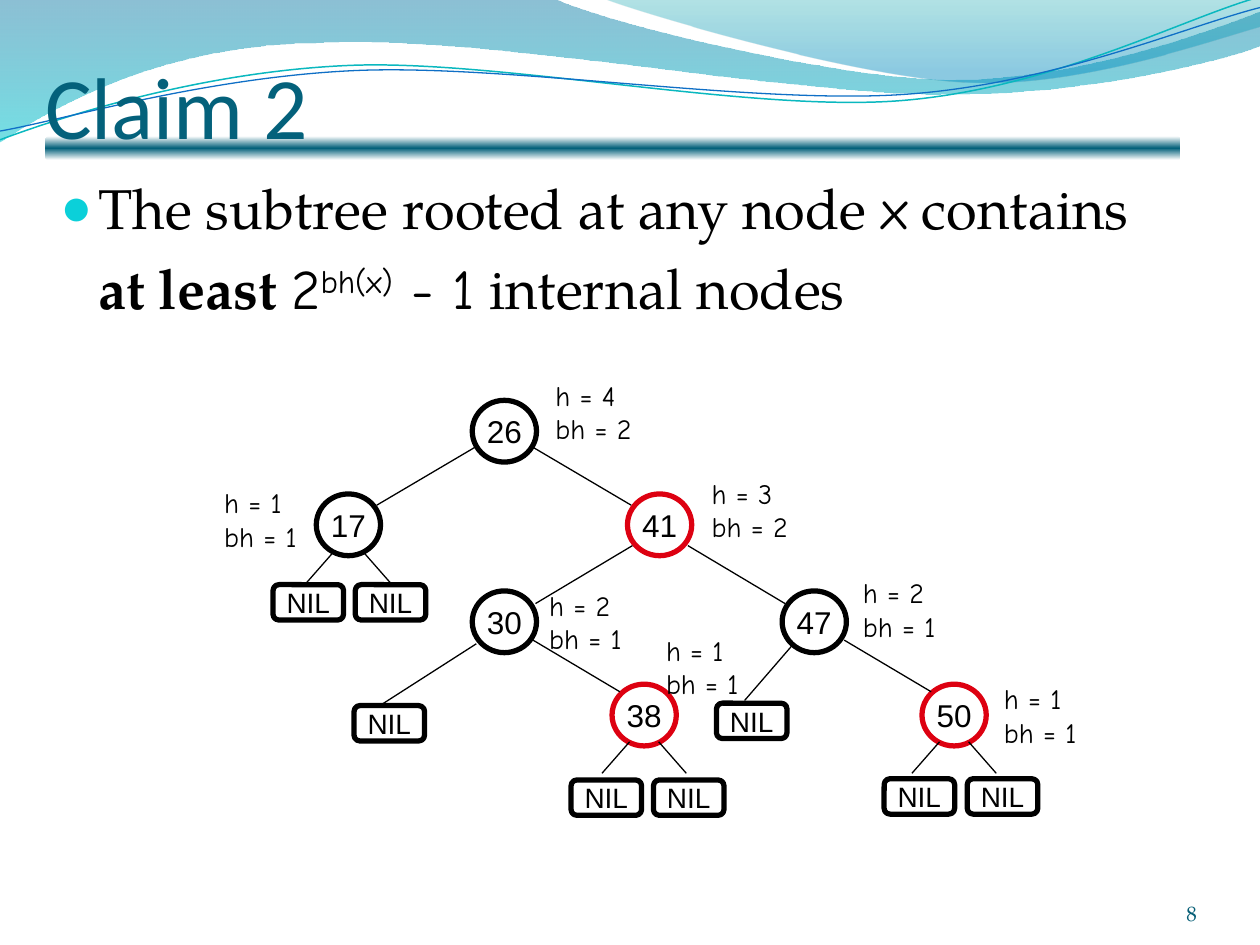
"""Build the slide on Claim 2 about black-heights in a red-black tree."""
from dataclasses import dataclass
from math import cos, radians, sin
from typing import NamedTuple

from lxml import etree
from pptx import Presentation
from pptx.dml.color import RGBColor
from pptx.enum.shapes import MSO_CONNECTOR, MSO_SHAPE
from pptx.enum.text import MSO_ANCHOR, MSO_AUTO_SIZE, PP_ALIGN
from pptx.oxml import parse_xml
from pptx.oxml.ns import nsdecls, qn
from pptx.util import Pt

OVAL, ROUNDED = MSO_SHAPE.OVAL, MSO_SHAPE.ROUNDED_RECTANGLE
STRAIGHT = MSO_CONNECTOR.STRAIGHT
TOP, MIDDLE, BOTTOM = MSO_ANCHOR.TOP, MSO_ANCHOR.MIDDLE, MSO_ANCHOR.BOTTOM
LEFT, CENTER, RIGHT = PP_ALIGN.LEFT, PP_ALIGN.CENTER, PP_ALIGN.RIGHT
GROW = MSO_AUTO_SIZE.SHAPE_TO_FIT_TEXT

Point = tuple[float, float]


@dataclass(frozen=True)
class Theme:
    black: str = "000000"
    red: str = "DD0111"
    title: str = "04617B"
    page: str = "045D75"
    bullet: str = "0BD0D9"
    teal_line: str = "0AB8BF"
    blue_line: str = "0F6FC6"
    serif: str = "TeX Gyre Pagella"
    comic: str = "Comic Neue"
    sans: str = "Arial"
    heading: str = "Calibri"
    title_size: int = 50
    body_size: int = 32
    key_size: int = 18
    note_size: int = 16
    page_size: int = 12


THEME = Theme()


class Span(NamedTuple):
    text: str
    font: str
    size: int
    color: str = THEME.black
    bold: bool = False
    raised: bool = False


class Stop(NamedTuple):
    position: int
    color: str
    opacity: int = 100


class Wave(NamedTuple):
    box: tuple[float, float, float, float]
    segments: list[list[Point]]
    stops: list[Stop] = []
    color: str = ""
    width: float = 0
    rotation: float = 0


class Node(NamedTuple):
    key: int
    center: Point
    color: str
    height: int
    black_height: int
    note_at: Point
    nil_tops: tuple[Point, ...] = ()


NODE_SIZE = (36.7, 35.3)
NIL_SIZE = (40.3, 20.2)
TWIG_START, TWIG_END = (8.3, 15.3), (24.1, 33.3)

WAVES = [
    Wave((-0.7, -0.7, 721.4, 82.1),
         [[(0, -0.7)], [(316.8, -0.7)],
          [(342.7, 12.2), (478.1, 45.4), (545.8, 45.4)],
          [(614.2, 45.4), (689.8, 18.7), (720, 6.5)], [(720.7, 25.9)],
          [(707.8, 31.7), (626.4, 54.7), (537.1, 54)],
          [(447.8, 54), (275, 20.2), (185, 24.5)],
          [(92.9, 25.2), (33.1, 59.8), (-0.7, 81.4)], [(0, -0.7)]],
         [Stop(0, "0074A1", 45), Stop(100, "00C6CF", 55)]),
    Wave((344.9, -0.7, 375.1, 50.4),
         [[(344.9, -0.7)], [(366.5, 7.9), (491, 44.6), (553.7, 46.8)],
          [(616.3, 49.7), (691.9, 23), (720, 15.1)], [(720, 0)], [(344.9, -0.7)]],
         [Stop(0, "00A1A9", 30), Stop(80, "008BBF", 45)]),
    Wave((-1.4, 15.8, 721.4, 51.1),
         [[(0, 79.9)], [(34.6, 67), (113.8, 41), (199.4, 37.4)],
          [(284.4, 33.8), (427, 64.1), (513.4, 57.6)],
          [(599.8, 51.1), (675.4, 10.8), (718.6, -1.4)]],
         color=THEME.teal_line, width=0.85, rotation=357.3),
    Wave((-1.4, 21.6, 722.2, 41.8),
         [[(0, 74.9)], [(33.8, 69.1), (118.1, 43.9), (203.8, 40.3)],
          [(290.2, 36.7), (429.8, 59.8), (516.2, 54)],
          [(601.9, 48.2), (677.5, 15.1), (720, 4.3)]],
         color=THEME.blue_line, width=0.75, rotation=357.3),
]

TREE = [
    Node(26, (288.2, 246.4), THEME.black, 4, 2, (310.3, 212.6)),
    Node(17, (199.1, 299.9), THEME.black, 1, 1, (121, 274.1),
         ((176.2, 334.1), (223.2, 334.1))),
    Node(41, (376.9, 299.9), THEME.red, 3, 2, (399.6, 268.6)),
    Node(30, (288.2, 355.3), THEME.black, 2, 1, (306.7, 332.6), ((222.5, 403.2),)),
    Node(47, (465.3, 355.3), THEME.black, 2, 1, (486, 325.4), ((429.6, 401.8),)),
    Node(38, (368.1, 408.6), THEME.red, 1, 1, (373.5, 358.4),
         ((346.5, 445.7), (393.6, 445.7))),
    Node(50, (545.2, 408.6), THEME.red, 1, 1, (566.6, 385.9),
         ((525.4, 445), (572.9, 445))),
]

BRANCHES = [
    ((271.4, 255.6), (215.3, 288.7)), ((304.6, 255.6), (360.7, 288.7)),
    ((361.4, 311.8), (306, 344.9)), ((393.1, 311.8), (448.6, 344.9)),
    ((304.6, 365.8), (354.2, 395.3)), ((482.4, 365.8), (532.1, 395.3)),
    ((272.2, 367.9), (218.2, 402.5)), ((452.2, 369.4), (425.5, 400.3)),
]


def set_gradient(shape, stops: list[Stop]) -> None:
    """Fill a shape with a top-to-bottom gradient."""
    shape.fill.background()
    gradient = parse_xml(f'<a:gradFill {nsdecls("a")} rotWithShape="1"><a:gsLst>' + "".join(
        f'<a:gs pos="{s.position * 1000}"><a:srgbClr val="{s.color}">'
        f'<a:alpha val="{s.opacity * 1000}"/></a:srgbClr></a:gs>' for s in stops
    ) + '</a:gsLst><a:lin ang="5400000" scaled="0"/></a:gradFill>')
    properties = shape._element.spPr
    properties.replace(properties.find(qn("a:noFill")), gradient)


def to_local(point: Point, wave: Wave) -> Point:
    """Give a point relative to the wave's box before its rotation."""
    left, top, width, height = wave.box
    dx, dy = point[0] - left - width / 2, point[1] - top - height / 2
    turn = radians(-wave.rotation)
    return (dx * cos(turn) - dy * sin(turn) + width / 2,
            dx * sin(turn) + dy * cos(turn) + height / 2)


def draw_wave(shapes, wave: Wave) -> None:
    """Draw a filled wave or a wavy line with cubic curves."""
    ends = [(Pt(x), Pt(y)) for x, y in (segment[-1] for segment in wave.segments)]
    builder = shapes.build_freeform(*ends[0], scale=1.0)
    builder.add_line_segments(ends[1:], close=bool(wave.stops))
    shape = builder.convert_to_shape()
    shape.left, shape.top, shape.width, shape.height = map(Pt, wave.box)
    shape.rotation = wave.rotation
    shape.shadow.inherit = False
    outline = next(shape._element.iter(qn("a:path")))
    outline.set("w", str(shape.width))
    outline.set("h", str(shape.height))
    for step, segment in zip(list(outline), wave.segments):
        if len(segment) == 3:
            step.tag = qn("a:cubicBezTo")
        for old in list(step):
            step.remove(old)
        for x, y in (to_local(point, wave) for point in segment):
            etree.SubElement(step, qn("a:pt"), x=str(Pt(x)), y=str(Pt(y)))
    if wave.stops:
        set_gradient(shape, wave.stops)
        shape.line.fill.background()
    else:
        shape.fill.background()
        shape.line.color.rgb = RGBColor.from_string(wave.color)
        shape.line.width = Pt(wave.width)


def write(frame, lines: list[list[Span]], align=LEFT, anchor=TOP, wrap: bool = False) -> None:
    """Write paragraphs run by run into a text frame."""
    frame.word_wrap = wrap
    frame.vertical_anchor = anchor
    for index, spans in enumerate(lines):
        paragraph = frame.add_paragraph() if index else frame.paragraphs[0]
        paragraph.alignment = align
        for span in spans:
            run = paragraph.add_run()
            run.text = span.text
            run.font.name, run.font.size, run.font.bold = span.font, Pt(span.size), span.bold
            run.font.color.rgb = RGBColor.from_string(span.color)
            if span.raised:
                run._r.get_or_add_rPr().set("baseline", "30000")


def add_text(shapes, box: tuple[float, ...], lines: list[list[Span]], top_inset: float = 3.6,
             side_inset: float = 7.2, bottom_inset: float = 3.6, **layout):
    """Add a text box and return its frame."""
    frame = shapes.add_textbox(*map(Pt, box)).text_frame
    frame.margin_left = frame.margin_right = Pt(side_inset)
    frame.margin_top, frame.margin_bottom = Pt(top_inset), Pt(bottom_inset)
    write(frame, lines, **layout)
    return frame


def draw_cell(shapes, kind, center: Point, size: Point, color: str, label: Span) -> None:
    """Draw an outlined tree cell around its centre."""
    (x, y), (width, height) = center, size
    cell = shapes.add_shape(kind, Pt(x - width / 2), Pt(y - height / 2), Pt(width), Pt(height))
    cell.shadow.inherit = False
    cell.fill.background()
    cell.line.color.rgb = RGBColor.from_string(color)
    cell.line.width = Pt(3)
    write(cell.text_frame, [[label]], CENTER, MIDDLE)


def draw_edge(shapes, start: Point, end: Point) -> None:
    """Draw a thin line between two tree cells."""
    edge = shapes.add_connector(STRAIGHT, *map(Pt, (*start, *end)))
    edge.line.color.rgb = RGBColor.from_string(THEME.black)
    edge.line.width = Pt(0.75)
    etree.SubElement(edge._element.spPr, qn("a:effectLst"))


def draw_tree(shapes) -> None:
    """Draw the nodes, edges, NIL leaves and height notes."""
    for node in TREE:
        draw_cell(shapes, OVAL, node.center, NODE_SIZE, node.color,
                  Span(str(node.key), THEME.sans, THEME.key_size))
    for start, end in BRANCHES:
        draw_edge(shapes, start, end)
    for node in TREE:
        for x, y in node.nil_tops:
            draw_cell(shapes, ROUNDED, (x, y + NIL_SIZE[1] / 2), NIL_SIZE, THEME.black,
                      Span("NIL", THEME.sans, THEME.note_size))
        if len(node.nil_tops) == 2:
            for side in (-1, 1):
                draw_edge(shapes, *((node.center[0] + side * dx, node.center[1] + dy)
                                    for dx, dy in (TWIG_START, TWIG_END)))
    for node in TREE:
        notes = (f"h = {node.height}", f"bh = {node.black_height}")
        frame = add_text(shapes, (*node.note_at, 59, 46),
                         [[Span(note, THEME.comic, THEME.note_size)] for note in notes])
        frame.auto_size = GROW


def draw_claim(shapes) -> None:
    """Write the bulleted claim."""
    size, serif, comic = THEME.body_size, THEME.serif, THEME.comic
    frame = add_text(shapes, (27.4, 87.8, 655.9, 457.9), [[
        Span("The subtree rooted at any node ", serif, size), Span("x", comic, size),
        Span(" contains ", serif, size), Span("at least ", serif, size, bold=True),
        Span("2", comic, size), Span("bh(x)", comic, size, raised=True),
        Span(" - 1", comic, size), Span(" internal nodes", serif, size)]], wrap=True)
    paragraph = frame.paragraphs[0]
    paragraph.line_spacing, paragraph.space_before = 1.2, Pt(6.4)
    properties = paragraph._p.get_or_add_pPr()
    properties.set("marL", str(Pt(21.6)))
    properties.set("indent", str(-Pt(21.6)))
    color = etree.SubElement(properties, qn("a:buClr"))
    etree.SubElement(color, qn("a:srgbClr"), val=THEME.bullet)
    etree.SubElement(properties, qn("a:buSzPct"), val="95000")
    etree.SubElement(properties, qn("a:buFont"), typeface=THEME.sans)
    etree.SubElement(properties, qn("a:buChar"), char="●")


def main() -> None:
    """Build and save the slide."""
    deck = Presentation()
    deck.slide_width, deck.slide_height = Pt(720), Pt(540)
    shapes = deck.slides.add_slide(deck.slide_layouts[6]).shapes
    for wave in WAVES:
        draw_wave(shapes, wave)
    rule = shapes.add_shape(ROUNDED, Pt(25.9), Pt(77.8), Pt(648.7), Pt(13.7))
    rule.shadow.inherit = False
    rule.line.fill.background()
    set_gradient(rule, [Stop(0, "FFFFFF"), Stop(50, THEME.title), Stop(100, "FFFFFF")])
    add_text(shapes, (25.9, 0, 648, 90),
             [[Span("Claim 2", THEME.heading, THEME.title_size, THEME.title)]],
             side_inset=0, bottom_inset=0, anchor=BOTTOM, wrap=True)
    draw_claim(shapes)
    add_text(shapes, (624.2, 500.4, 59.8, 28.8),
             [[Span("8", THEME.serif, THEME.page_size, THEME.page)]],
             0, 0, 0, align=RIGHT, anchor=BOTTOM, wrap=True)
    draw_tree(shapes)
    deck.save("out.pptx")


if __name__ == "__main__":
    main()
